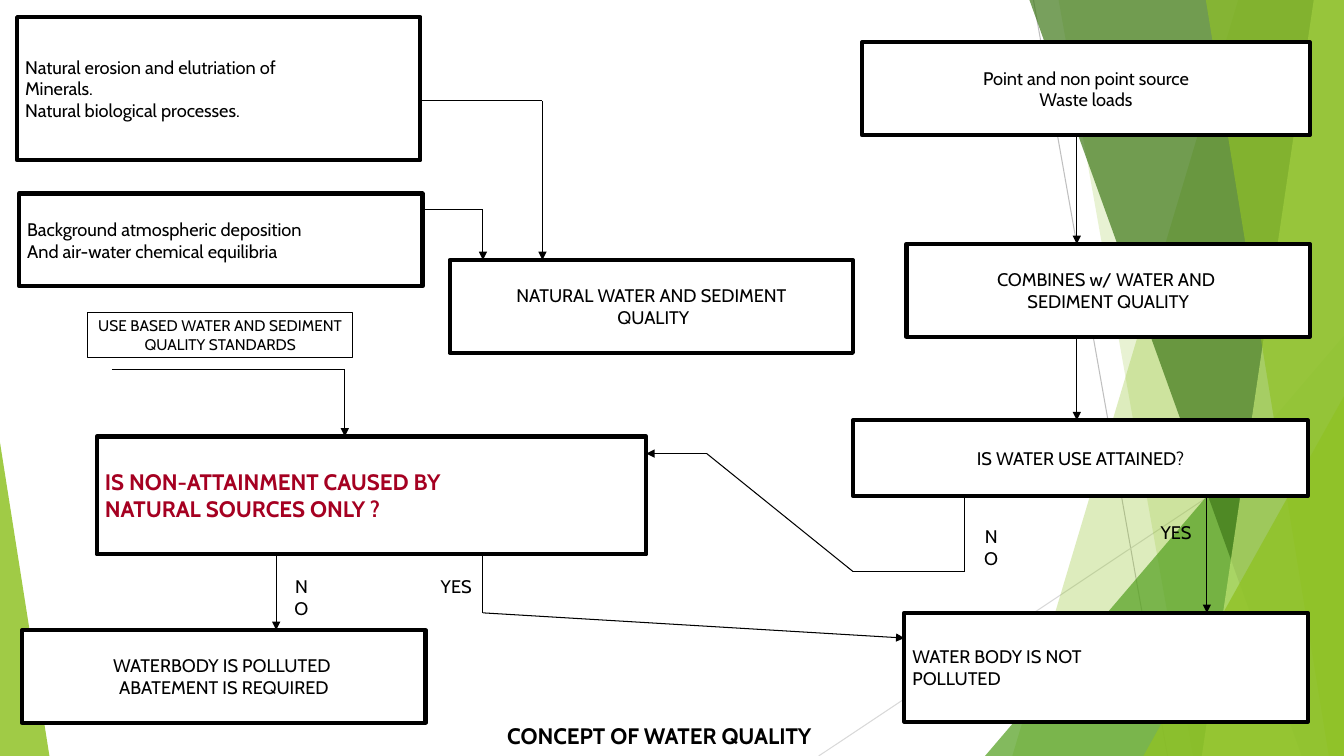
from dataclasses import dataclass
from itertools import pairwise

from lxml.etree import SubElement
from pptx import Presentation
from pptx.dml.color import RGBColor
from pptx.enum.shapes import MSO_CONNECTOR, MSO_SHAPE
from pptx.enum.text import MSO_ANCHOR, MSO_AUTO_SIZE, PP_ALIGN
from pptx.oxml.ns import qn
from pptx.slide import Slide
from pptx.text.text import TextFrame
from pptx.util import Inches, Pt

WIDTH, HEIGHT = 13.33, 7.5
FONT = "Cabin"
COLORS = {
    "black": "000000",
    "white": "FFFFFF",
    "crimson": "A50021",
    "silver": "BFBFBF",
    "mist": "D9D9D9",
    "lime": "90C226",
    "leaf": "54A021",
    "forest": "3F7819",
    "pale": "C0E474",
}

Point = tuple[float, float]


@dataclass(frozen=True)
class Facet:
    points: tuple[Point, ...]
    color: str
    opacity: int


@dataclass(frozen=True)
class Step:
    lines: tuple[str, ...]
    left: float
    top: float
    width: float = 4
    height: float = 0.92
    align: PP_ALIGN = PP_ALIGN.CENTER
    size: int = 13
    color: str = "black"
    bold: bool = False


@dataclass(frozen=True)
class Caption:
    lines: tuple[str, ...]
    left: float
    top: float
    width: float
    height: float = 0.3
    size: int = 13
    bold: bool = False
    framed: bool = False


@dataclass(frozen=True)
class Route:
    points: tuple[Point, ...]
    color: str = "black"
    arrow: bool = True


def right_facet(top: float, bottom: float, color: str, opacity: int) -> Facet:
    return Facet(((WIDTH, 0), (top, 0), (bottom, HEIGHT), (WIDTH, HEIGHT)), color, opacity)


def corner_facet(rise: float, bottom: float, color: str, opacity: int) -> Facet:
    return Facet(((WIDTH, rise), (bottom, HEIGHT), (WIDTH, HEIGHT)), color, opacity)


HAIRLINES = (
    Route(((10.25, 0), (11.58, HEIGHT)), "silver", False),
    Route(((WIDTH, 4.03), (8.12, HEIGHT)), "mist", False),
)
FACETS = (
    right_facet(12.28, 10.04, "lime", 30),
    right_facet(10.5, 11.83, "lime", 20),
    corner_facet(3.33, 9.77, "leaf", 72),
    right_facet(10.21, 12.91, "forest", 70),
    right_facet(13.03, 11.92, "pale", 70),
    right_facet(11.96, 13.18, "lime", 65),
    corner_facet(3.93, 11.34, "lime", 80),
    Facet(((0, 4.39), (0, HEIGHT), (0.49, HEIGHT)), "lime", 85),
)
STEPS = (
    Step(("NATURAL WATER AND SEDIMENT", " QUALITY"), 4.46, 2.58),
    Step(("COMBINES w/ WATER AND ", "SEDIMENT QUALITY"), 8.99, 2.42),
    Step(("Point and non point source", "Waste loads"), 8.55, 0.42, 4.44),
    Step(("Background atmospheric deposition", "And air-water chemical equilibria"),
         0.19, 1.92, align=PP_ALIGN.LEFT),
    Step(("Natural erosion and elutriation of", "Minerals.", "Natural biological processes."),
         0.17, 0.17, height=1.42, align=PP_ALIGN.LEFT),
    Step(("IS WATER USE ATTAINED?",), 8.46, 4.17, 4.51, 0.75),
    Step(("WATER BODY IS NOT", "POLLUTED"), 8.97, 6.08, height=1.08, align=PP_ALIGN.LEFT),
    Step(("IS NON-ATTAINMENT CAUSED BY", "NATURAL SOURCES ONLY ?"),
         0.96, 4.33, 5.45, 1.17, PP_ALIGN.LEFT, 16, "crimson", True),
    Step(("WATERBODY IS POLLUTED ", "ABATEMENT IS REQUIRED"), 0.22, 6.25),
)
ROUTES = (
    Route(((10.68, 1.33), (10.68, 2.42))),
    Route(((10.68, 3.33), (10.68, 4.17))),
    Route(((11.97, 4.92), (11.97, 6.08))),
    Route(((9.57, 4.92), (9.57, 5.67), (8.46, 5.67), (7.01, 4.5), (6.41, 4.5))),
    Route(((2.74, 5.5), (2.74, 6.25))),
    Route(((4.79, 5.5), (4.79, 6.08), (8.97, 6.33))),
    Route(((4.19, 2.08), (4.79, 2.08), (4.79, 2.58))),
    Route(((4.19, 1), (5.38, 1), (5.38, 2.58))),
    Route(((1.11, 3.67), (3.42, 3.67), (3.42, 4.33))),
)
CAPTIONS = (
    Caption(("YES",), 11.43, 5.13, 0.47),
    Caption(("NO",), 9.62, 5.17, 0.42),
    Caption(("USE BASED WATER AND SEDIMENT", "QUALITY STANDARDS"),
            0.87, 3.1, 2.63, 0.45, size=11, framed=True),
    Caption(("NO",), 2.78, 5.67, 0.42),
    Caption(("YES",), 4.29, 5.67, 0.47),
    Caption(("CONCEPT OF WATER QUALITY",), 4.75, 7.12, 3.58, 0.35, size=16, bold=True),
)


def rgb(name: str) -> RGBColor:
    return RGBColor.from_string(COLORS[name])


def write_text(frame: TextFrame, lines: tuple[str, ...], *, size: int, color: str = "black",
               bold: bool = False, align: PP_ALIGN = PP_ALIGN.CENTER,
               anchor: MSO_ANCHOR = MSO_ANCHOR.TOP) -> None:
    frame.word_wrap = True
    frame.vertical_anchor = anchor
    frame.margin_left = frame.margin_right = Inches(0.08)
    frame.margin_top = frame.margin_bottom = Inches(0.04)
    for index, line in enumerate(lines):
        para = frame.add_paragraph() if index else frame.paragraphs[0]
        para.alignment = align
        span = para.add_run()
        span.text = line
        span.font.name = FONT
        span.font.size = Pt(size)
        span.font.bold = bold
        span.font.color.rgb = rgb(color)


def draw_facet(page: Slide, facet: Facet) -> None:
    start, *others = [(Inches(x), Inches(y)) for x, y in facet.points]
    builder = page.shapes.build_freeform(*start)
    builder.add_line_segments(others, close=True)
    shape = builder.convert_to_shape()
    shape.shadow.inherit = False
    shape.line.fill.background()
    shape.fill.solid()
    shape.fill.fore_color.rgb = rgb(facet.color)
    color_node = shape.fill._xPr.find(qn("a:solidFill"))[0]
    SubElement(color_node, qn("a:alpha"), val=str(facet.opacity * 1000))


def draw_step(page: Slide, step: Step) -> None:
    box = page.shapes.add_shape(MSO_SHAPE.RECTANGLE, Inches(step.left), Inches(step.top),
                                Inches(step.width), Inches(step.height))
    box.shadow.inherit = False
    box.fill.solid()
    box.fill.fore_color.rgb = rgb("white")
    box.line.color.rgb = rgb("black")
    box.line.width = Pt(3)
    write_text(box.text_frame, step.lines, size=step.size, color=step.color, bold=step.bold,
               align=step.align, anchor=MSO_ANCHOR.MIDDLE)


def draw_caption(page: Slide, caption: Caption) -> None:
    box = page.shapes.add_textbox(Inches(caption.left), Inches(caption.top),
                                  Inches(caption.width), Inches(caption.height))
    if caption.framed:
        box.line.color.rgb = rgb("black")
        box.line.width = Pt(0.75)
    write_text(box.text_frame, caption.lines, size=caption.size, bold=caption.bold)
    box.text_frame.auto_size = MSO_AUTO_SIZE.SHAPE_TO_FIT_TEXT


def draw_route(page: Slide, route: Route) -> None:
    for start, end in pairwise(route.points):
        connector = page.shapes.add_connector(
            MSO_CONNECTOR.STRAIGHT, *(Inches(value) for value in start + end))
        connector.line.color.rgb = rgb(route.color)
        connector.line.width = Pt(0.75)
        if route.arrow and end == route.points[-1]:
            SubElement(connector.line._get_or_add_ln(), qn("a:tailEnd"), type="triangle")
        SubElement(connector._element.spPr, qn("a:effectLst"))


def main() -> None:
    deck = Presentation()
    deck.slide_width, deck.slide_height = Inches(WIDTH), Inches(HEIGHT)
    page = deck.slides.add_slide(deck.slide_layouts[6])
    for items, draw in ((HAIRLINES, draw_route), (FACETS, draw_facet), (STEPS, draw_step),
                        (ROUTES, draw_route), (CAPTIONS, draw_caption)):
        for item in items:
            draw(page, item)
    deck.save("out.pptx")


if __name__ == "__main__":
    main()
